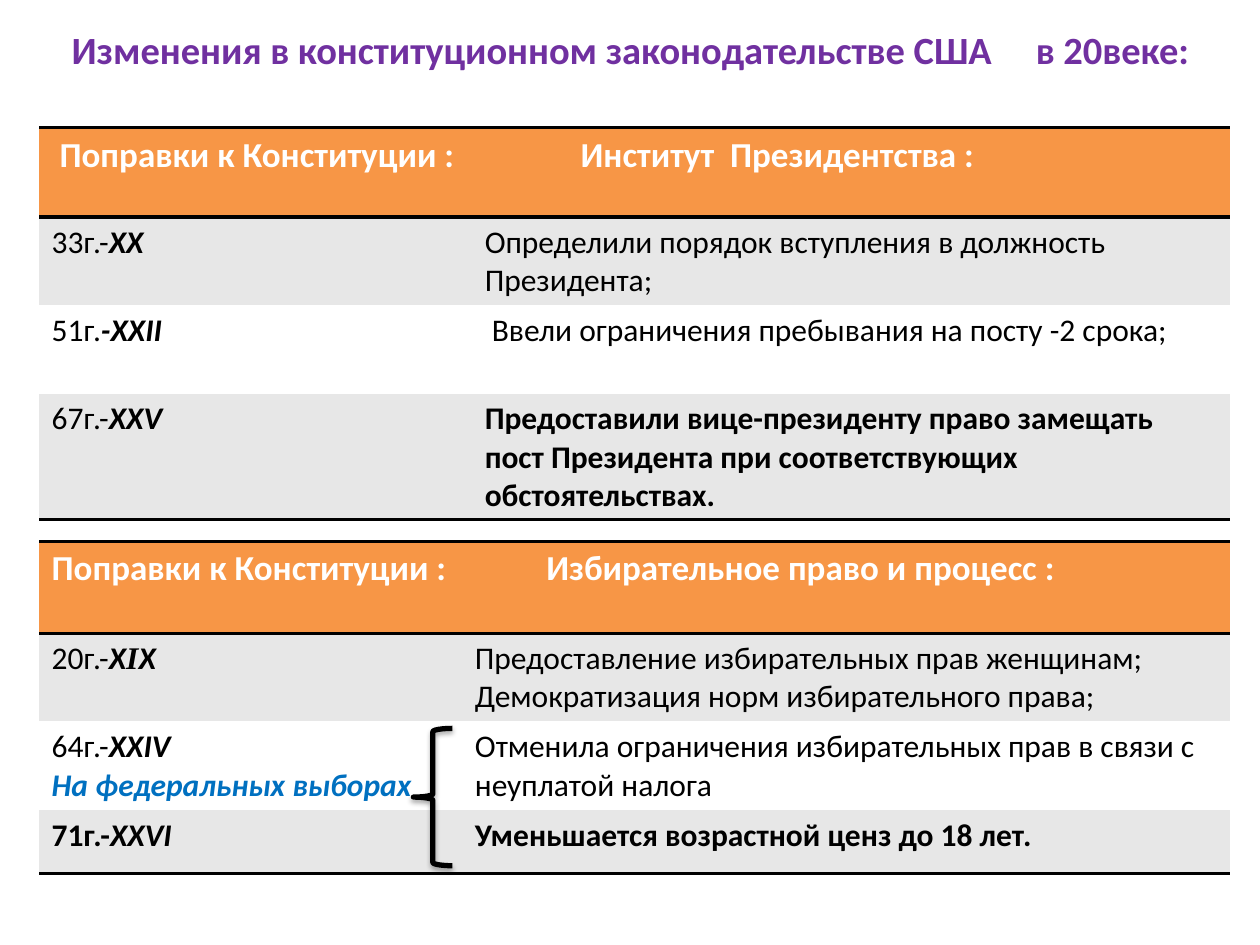
import pptx
import pptx.util
import pptx.dml.color
import pptx.enum.shapes
import pptx.enum.text
import pptx.oxml
import pptx.oxml.ns
from dataclasses import dataclass
from lxml import etree

Pt = pptx.util.Pt
qn = pptx.oxml.ns.qn
NS = 'xmlns:a="http://schemas.openxmlformats.org/drawingml/2006/main"'
PLAIN = "{2D5ABB26-0587-4C30-8999-92F81FD0307C}"  # table style: no grid


@dataclass(frozen=True)
class Theme:
    face: str = "Calibri"
    serif: str = "Times New Roman"
    title: str = "7030A0"
    head: str = "F79646"
    band: str = "E7E7E7"
    white: str = "FFFFFF"
    ink: str = "000000"
    note: str = "0070C0"
    big: float = 22
    mid: float = 20
    body: float = 18
    rule: float = 2
    brace: float = 3


T = Theme()


def rgb(code):
    return pptx.dml.color.RGBColor.from_string(code)


def style(font, size, color, bold=False):
    font.name, font.size, font.bold = T.face, Pt(size), bold
    font.color.rgb = rgb(color)


def add_runs(para, parts):
    """Each part is plain text or (text, font settings)."""
    for part in parts:
        text, look = (part, {}) if isinstance(part, str) else part
        run = para.add_run()
        run.text = text
        for key, value in look.items():
            setattr(run.font, key, value)


def bold(text, **more):
    return text, dict(bold=True, italic=True, **more)


def add_rule(cell, *sides):
    props = cell._tc.get_or_add_tcPr()
    for spot, side in enumerate(sides):
        props.insert(spot, pptx.oxml.parse_xml(
            f'<a:ln{side} {NS} w="{Pt(T.rule)}"><a:solidFill>'
            f'<a:srgbClr val="{T.ink}"/></a:solidFill></a:ln{side}>'))


def add_title(slide, box, left, right, gap):
    frame = slide.shapes.add_textbox(*map(Pt, box)).text_frame
    frame.word_wrap = True
    para = frame.paragraphs[0]
    para.alignment = pptx.enum.text.PP_ALIGN.CENTER
    style(para.font, T.big, T.title, True)
    add_runs(para, [left, " ", right])
    # Widen the one space between the two halves
    para.runs[1]._r.get_or_add_rPr().set("spc", str(gap * 100))


def add_grid(slide, box, cols, rows, inset, data):
    """Header row, banded body and a bold last row."""
    grid = slide.shapes.add_table(len(rows), len(cols), *map(Pt, box)).table
    grid._tbl.tblPr.find(qn("a:tableStyleId")).text = PLAIN
    grid.first_row = grid.horz_banding = False
    for col, width in zip(grid.columns, cols):
        col.width = Pt(width)
    for row, height in zip(grid.rows, rows):
        row.height = Pt(height)
    last = len(rows) - 1
    for r, line in enumerate(data):
        for c, paras in enumerate(line):
            cell = grid.cell(r, c)
            cell.fill.solid()
            cell.fill.fore_color.rgb = rgb(
                T.head if r == 0 else T.band if r % 2 else T.white)
            if r == 0:
                add_rule(cell, "T", "B")
            elif r == last:
                add_rule(cell, "B")
            frame = cell.text_frame
            for n, parts in enumerate(paras):
                para = frame.add_paragraph() if n else frame.paragraphs[0]
                if r == 0:
                    style(para.font, T.mid, T.white, True)
                else:
                    style(para.font, T.body, T.ink, r == last and (c or inset < 50))
                add_runs(para, parts)
    grid.cell(0, 1).margin_left = Pt(inset)


def add_brace(slide, box):
    brace = slide.shapes.add_shape(
        pptx.enum.shapes.MSO_SHAPE.RIGHT_BRACE, *map(Pt, box))
    brace.rotation = 180
    brace.fill.background()
    brace.line.color.rgb = rgb(T.ink)
    brace.line.width = Pt(T.brace)
    brace.shadow.inherit = False
    cast = brace._element.spPr.find(qn("a:effectLst"))
    cast.append(etree.fromstring(
        f'<a:outerShdw {NS} blurRad="{Pt(3.1)}" dist="{Pt(1.8)}" dir="5400000" '
        f'rotWithShape="0"><a:srgbClr val="{T.ink}"><a:alpha val="35000"/>'
        '</a:srgbClr></a:outerShdw>'))


# Table contents: rows of cells, each cell a list of paragraphs
POWER = [
    [[[" Поправки к Конституции :"]], [["Институт  Президентства :"]]],
    [[["33г.-", bold("XX")]],
     [["Определили порядок вступления в должность Президента;"]]],
    [[["51г.", bold("-XXII")]],
     [[" Ввели ограничения пребывания на посту -2 срока;"]]],
    [[["67г.-", bold("XXV")]],
     [["Предоставили вице-президенту право замещать пост Президента "
       "при соответствующих обстоятельствах."]]],
]
VOTE = [
    [[["Поправки к Конституции :"]], [["Избирательное право и процесс :"]]],
    [[["20г.-", bold("X"), bold("I", name=T.serif), bold("X")]],
     [["Предоставление избирательных прав женщинам;"],
      ["Демократизация норм избирательного права;"]]],
    [[["64г.-", bold("XXIV")], [bold("На федеральных выборах")]],
     [["Отменила ограничения избирательных прав в связи с неуплатой налога"]]],
    [[["71г.-", bold("XXVI")]],
     [["Уменьшается возрастной ценз до 18 лет."]]],
]


def main():
    deck = pptx.Presentation()
    deck.slide_width, deck.slide_height = Pt(720), Pt(540)
    slide = deck.slides.add_slide(deck.slide_layouts[6])

    add_title(slide, (11.5, 11.5, 697.5, 60.5),
              "Изменения в конституционном законодательстве США",
              "в 20веке:", 20)
    left, wide = 22.3, 680.6
    add_grid(slide, (left, 73, wide, 224), (247.5, 433.1),
             (51, 50.5, 50.5, 72), 62, POWER)
    add_grid(slide, (left, 309.3, wide, 190), (241.9, 438.7),
             (52.5, 50.5, 50.5, 36.5), 48, VOTE)
    # Colour the remark under the 1964 amendment
    grid = slide.shapes[-1].table
    remark = grid.cell(2, 0).text_frame.paragraphs[1]
    remark.runs[0].font.color.rgb = rgb(T.note)
    add_brace(slide, (236.2, 416.2, 22.3, 78.5))

    deck.save("out.pptx")


if __name__ == "__main__":
    main()
